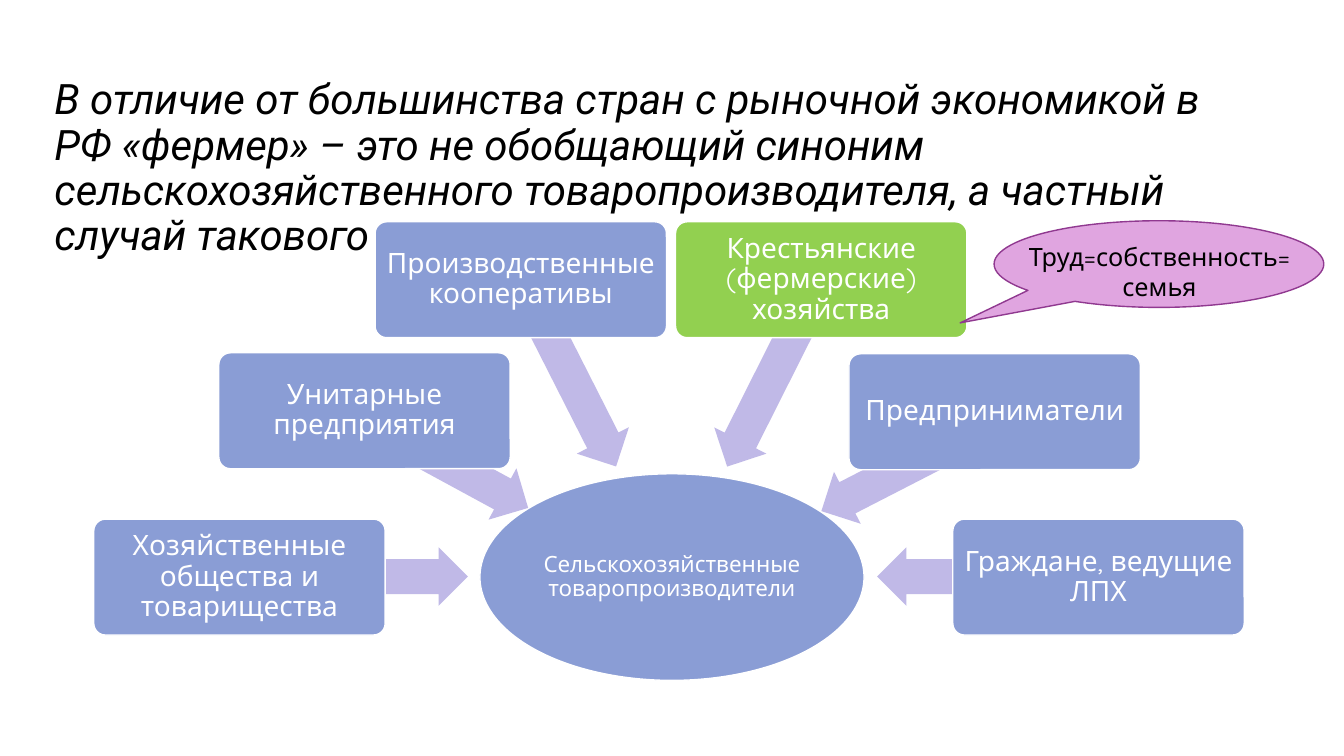
from lxml import etree
from pptx import Presentation
from pptx import util as u
from pptx.dml.color import RGBColor
from pptx.enum import shapes, text
from pptx.oxml.ns import qn

COLORS = {"node": "8A9DD5", "accent": "92D050", "arrow": "C0B9E7", "white": "FFFFFF",
          "black": "000000", "callout": "C34DC3", "callout_line": "903990"}
SHAPE = shapes.MSO_SHAPE
NODE_W, NODE_H, ARROW_H = 2.89, 1.15, 0.58

# label, node left, node top, fill, arrow left, top, length, rotation
PRODUCERS = [
    ("Хозяйственные общества и товарищества", 0.93, 5.15, "node", 2.38, 5.43, 2.26, 180),
    ("Унитарные предприятия", 2.17, 3.5, "node", 3.51, 4.31, 1.84, 208.5),
    ("Производственные кооперативы", 3.72, 2.2, "node", 4.6, 3.41, 2.08, 243.1),
    ("Крестьянские (фермерские) хозяйства", 6.7, 2.2, "accent", 6.64, 3.41, 2.08, 296.7),
    ("Предприниматели", 8.42, 3.51, "node", 8.04, 4.34, 1.93, 332.8),
    ("Граждане, ведущие ЛПХ", 9.45, 5.15, "node", 8.7, 5.43, 2.2, 0),
]


def rgb(name):
    return RGBColor.from_string(COLORS[name])


def write(tf, words, size, font="Quicksand", color="white", italic=False, spacing=0.9,
          align=text.PP_ALIGN.CENTER, anchor=text.MSO_ANCHOR.MIDDLE, inset=None):
    tf.word_wrap = True
    tf.auto_size = text.MSO_AUTO_SIZE.NONE
    tf.vertical_anchor = anchor
    if inset is not None:
        tf.margin_left = tf.margin_right = tf.margin_top = tf.margin_bottom = u.Inches(inset)
    p = tf.paragraphs[0]
    p.alignment, p.line_spacing = align, spacing
    r = p.add_run()
    r.text = words
    r.font.size, r.font.name, r.font.italic = u.Pt(size), font, italic
    r.font.color.rgb = rgb(color)


class Deck:
    def __init__(self):
        self.prs = Presentation()
        self.prs.slide_width, self.prs.slide_height = u.Inches(13.33), u.Inches(7.5)
        self.s = self.prs.slides.add_slide(self.prs.slide_layouts[5])

    def title(self, words, x, y, w, h):
        sp = self.s.shapes.title
        sp.left, sp.top, sp.width, sp.height = map(u.Inches, (x, y, w, h))
        write(sp.text_frame, words, 30, font="Roboto", color="black", italic=True,
              align=text.PP_ALIGN.LEFT, anchor=text.MSO_ANCHOR.BOTTOM)

    def shape(self, kind, x, y, w, h, fill, line=None, adj=()):
        sp = self.s.shapes.add_shape(kind, *map(u.Inches, (x, y, w, h)))
        sp.shadow.inherit = False
        sp.fill.solid()
        sp.fill.fore_color.rgb = rgb(fill)
        if line:
            sp.line.color.rgb, sp.line.width = rgb(line), u.Pt(1)
        else:
            sp.line.fill.background()
        for i, value in enumerate(adj):
            sp.adjustments[i] = value
        return sp

    def hub(self, words, x, y, w, h):
        sp = self.shape(SHAPE.OVAL, x, y, w, h, "node", "white")
        write(sp.text_frame, words, 16, inset=0.01)

    def node(self, words, x, y, fill):
        sp = self.shape(SHAPE.ROUNDED_RECTANGLE, x, y, NODE_W, NODE_H, fill, "white", [0.1])
        write(sp.text_frame, words, 20, inset=0.04)

    def arrow(self, x, y, length, rotation):
        sp = self.shape(SHAPE.LEFT_ARROW, x, y, length, ARROW_H, "arrow", adj=[0.6, 0.5])
        sp.rotation = rotation

    def callout(self, x, y, w, h, adj):
        sp = self.shape(SHAPE.OVAL_CALLOUT, x, y, w, h, "callout", "callout_line", adj)
        color = sp.fill._xPr.find(qn("a:solidFill"))[0]
        etree.SubElement(color, qn("a:alpha")).set("val", "50000")

    def label(self, words, x, y, w, h):
        sp = self.s.shapes.add_textbox(*map(u.Inches, (x, y, w, h)))
        write(sp.text_frame, words, 18, color="black", spacing=1.0, anchor=text.MSO_ANCHOR.TOP)


def main():
    deck = Deck()
    deck.title("В отличие от большинства стран с рыночной экономикой в РФ «фермер» – это не "
               "обобщающий синоним сельскохозяйственного товаропроизводителя, а частный "
               "случай такового", 0.44, 0.7, 11.91, 1.93)
    deck.hub("Сельскохозяйственные товаропроизводители", 4.76, 4.7, 3.81, 2.05)
    for words, x, y, fill, *arrow in PRODUCERS:
        deck.arrow(*arrow)
        deck.node(words, x, y, fill)
    deck.callout(9.86, 2.19, 3.27, 0.86, [-0.603, 0.679])
    deck.label("Труд=собственность=семья", 10.09, 2.34, 2.82, 0.71)
    deck.prs.save("out.pptx")


if __name__ == "__main__":
    main()
